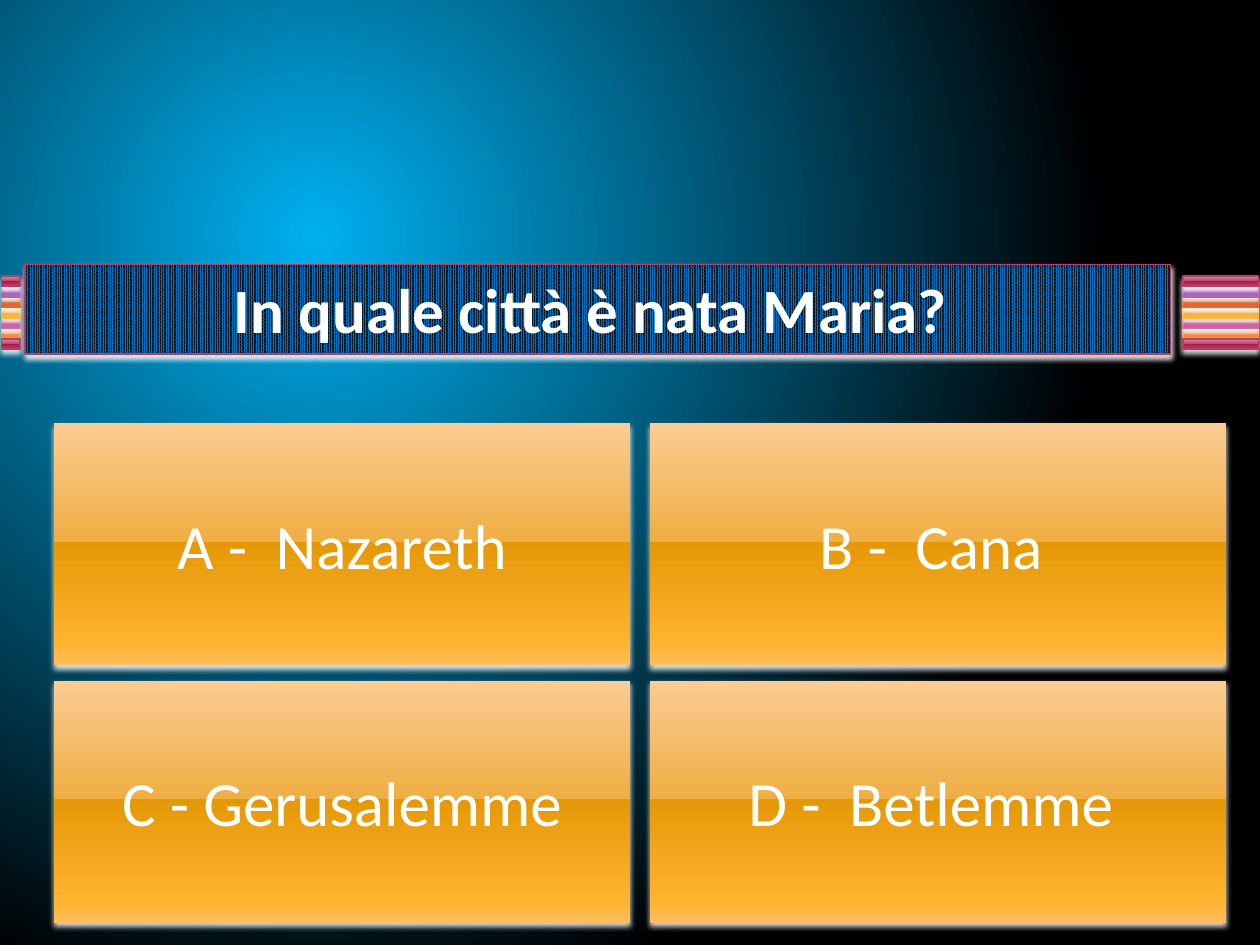
"""Build a quiz slide with a striped question banner and four answer tiles."""
from lxml import etree
from pptx import Presentation
from pptx.dml.color import RGBColor
from pptx.enum.dml import MSO_PATTERN
from pptx.enum.shapes import MSO_SHAPE
from pptx.enum.text import MSO_ANCHOR, MSO_AUTO_SIZE, PP_ALIGN
from pptx.oxml import parse_xml
from pptx.oxml.ns import qn
from pptx.util import Pt

RECT = MSO_SHAPE.RECTANGLE
PCT_90 = MSO_PATTERN.PERCENT_90
TOP, MIDDLE = MSO_ANCHOR.TOP, MSO_ANCHOR.MIDDLE
CENTER = PP_ALIGN.CENTER
FIT_SHAPE = MSO_AUTO_SIZE.SHAPE_TO_FIT_TEXT

THEME = {
    "font": "Calibri",
    "size": Pt(36),
    "line": Pt(0.9),
    "text": RGBColor.from_string("FFFFFF"),
    "shadow": "FFFFFF",
    "banner": ("0070C0", "000000"),
    "background": ("00B0F0", "000000"),
    "stops": (0, 49, 49, 92, 100),
    "gloss": {
        "raspberry": ("CE94A2", "B34869", "A61749", "C13764", "CA5D7C"),
        "purple": ("C6A2D0", "A666B4", "8F3EA1", "AD5DBF", "BA76CA"),
        "red": ("E7A493", "D66B42", "CC4809", "E9642C", "F07B55"),
        "amber": ("FBCC93", "EFAE43", "E59807", "FFB432", "FFBE5F"),
        "pink": ("DDA4C1", "C66B9D", "B34181", "D361A0", "DC79AE"),
        "orange": ("FBB494", "F08745", "E5670B", "FF8736", "FF9961"),
    },
    "edge": {"raspberry": "B83D68", "purple": "AC66BB", "red": "DE6C36",
             "amber": "F9B639", "pink": "CF6DA4", "orange": "FA8D3D"},
}


def set_gradient(parent, colors, positions, shade):
    """Replace the solid fill under parent with a gradient."""
    stops = "".join(f'<a:gs pos="{pos * 1000}"><a:srgbClr val="{color}"/></a:gs>'
                    for pos, color in zip(positions, colors))
    grad = parse_xml(
        '<a:gradFill xmlns:a="http://schemas.openxmlformats.org/drawingml/2006/main"'
        f' rotWithShape="1"><a:gsLst>{stops}</a:gsLst>{shade}</a:gradFill>')
    solid = parent.find(qn("a:solidFill"))
    parent.replace(solid, grad)


def add_box(shapes, x, y, w, h, gloss=None, edge=None):
    """Add a rectangle with a soft shadow, and a glossy fill and edge if named."""
    sp = shapes.add_shape(RECT, Pt(x), Pt(y), Pt(w), Pt(h))
    if gloss:
        sp.fill.solid()
        set_gradient(sp._element.spPr, THEME["gloss"][gloss], THEME["stops"],
                     '<a:lin ang="5400000" scaled="1"/>')
    if edge:
        sp.line.color.rgb = RGBColor.from_string(THEME["edge"][edge])
        sp.line.width = THEME["line"]
    else:
        sp.line.fill.background()
    sp.shadow.inherit = False
    effects = sp._element.spPr.find(qn("a:effectLst"))
    shadow = etree.SubElement(effects, qn("a:outerShdw"), blurRad=str(Pt(3.1)),
                              dist=str(Pt(2)), dir="5400000", rotWithShape="0")
    color = etree.SubElement(shadow, qn("a:srgbClr"), val=THEME["shadow"])
    etree.SubElement(color, qn("a:alpha"), val="83000")
    return sp


prs = Presentation()
prs.slide_width, prs.slide_height = Pt(720), Pt(540)
s = prs.slides.add_slide(prs.slide_layouts[6])

s.background.fill.solid()
set_gradient(s._element.cSld.bg.bgPr, THEME["background"], (0, 100),
             '<a:path path="circle"><a:fillToRect l="50000" t="50000"'
             ' r="100000" b="100000"/></a:path>')

stripes = ((5, "orange"), (4, "pink"), (3, "amber"), (2, "red"),
           (1, "purple"), (0, "raspberry"), (6, "raspberry"))
for x, w in ((0.8, 10.8), (676, 43.2)):
    group = s.shapes.add_group_shape()
    for row, name in stripes:
        add_box(group.shapes, x, 157.7 + 6 * row, w, 6, name, name)

tile_w, tile_h = 329, 138.2
gap_x, gap_y = 11.5, 8.7
labels = []
answers = ("A -  Nazareth", "B -  Cana ", "C - Gerusalemme", "D -  Betlemme ")
for i, answer in enumerate(answers):
    row, col = divmod(i, 2)
    sp = add_box(s.shapes, 31 + col * (tile_w + gap_x), 242 + row * (tile_h + gap_y),
                 tile_w, tile_h, "amber")
    labels.append((sp, answer, MIDDLE, False))

banner = add_box(s.shapes, 14.4, 151.2, 654.5, 51, edge="raspberry")
banner.fill.patterned()
banner.fill.pattern = PCT_90
fore, back = THEME["banner"]
banner.fill.fore_color.rgb = RGBColor.from_string(fore)
banner.fill.back_color.rgb = RGBColor.from_string(back)
banner.text_frame.auto_size = FIT_SHAPE
labels.append((banner, "In quale città è nata Maria? ", TOP, True))

for sp, text, anchor, bold in labels:
    tf = sp.text_frame
    tf.text = text
    tf.word_wrap = True
    tf.vertical_anchor = anchor
    p = tf.paragraphs[0]
    p.alignment = CENTER
    r = p.runs[0]
    r.font.name = THEME["font"]
    r.font.size = THEME["size"]
    r.font.bold = bold
    r.font.color.rgb = THEME["text"]

prs.save("out.pptx")
